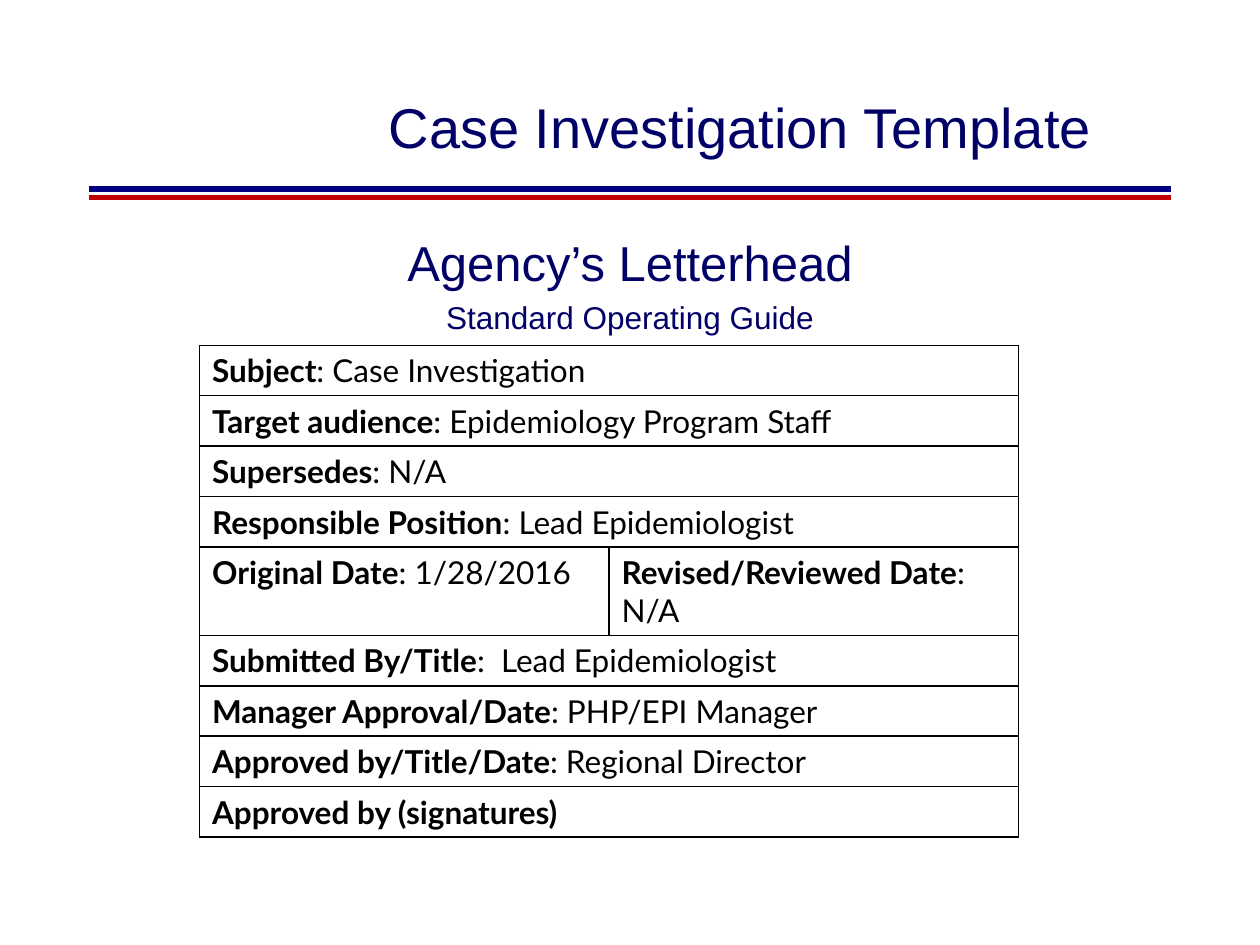
import pptx
import pptx.dml.color
import pptx.enum.shapes
import pptx.enum.text
import pptx.oxml
import pptx.oxml.ns
import pptx.util

Pt = pptx.util.Pt
CENTER = pptx.enum.text.PP_ALIGN.CENTER
MIDDLE = pptx.enum.text.MSO_ANCHOR.MIDDLE
NO_FIT = pptx.enum.text.MSO_AUTO_SIZE.NONE

NAVY, RULE_BLUE, RULE_RED = "000066", "000080", "C00000"
BLACK, WHITE = "000000", "FFFFFF"

# One row per line of the form; each cell is (label, value).
FORM = [
    [("Subject", ": Case Investigation")],
    [("Target audience", ": Epidemiology Program Staff")],
    [("Supersedes", ": N/A")],
    [("Responsible Position", ": Lead Epidemiologist")],
    [("Original Date", ": 1/28/2016"), ("Revised/Reviewed Date", ": N/A")],
    [("Submitted By/Title", ":  Lead Epidemiologist")],
    [("Manager Approval/Date", ": PHP/EPI Manager")],
    [("Approved by/Title/Date", ": Regional Director")],
    [("Approved by (signatures)", "")],
]


def rgb(hex_color):
    return pptx.dml.color.RGBColor.from_string(hex_color)


def style(font, name, size, color, bold=False):
    font.name = name
    font.size = Pt(size)
    font.bold = bold
    font.color.rgb = rgb(color)


def place(shape, box):
    shape.left, shape.top, shape.width, shape.height = map(Pt, box)


def add_title(slide, box):
    title = slide.shapes.title
    place(title, box)
    frame = title.text_frame
    frame.text = "Case Investigation Template"
    frame.auto_size = NO_FIT
    frame.vertical_anchor = MIDDLE
    heading = frame.paragraphs[0]
    heading.alignment = CENTER
    style(heading.runs[0].font, "Arial", 32, NAVY)


def add_double_rule(slide, box):
    left, top, width, gap = box
    for y, color in ((top, RULE_BLUE), (top + gap, RULE_RED)):
        rule = slide.shapes.add_connector(
            pptx.enum.shapes.MSO_CONNECTOR.STRAIGHT,
            Pt(left), Pt(y), Pt(left + width), Pt(y))
        rule.line.color.rgb = rgb(color)
        rule.line.width = Pt(3)
        rule._element.spPr.append(pptx.oxml.parse_xml(
            f'<a:effectLst {pptx.oxml.ns.nsdecls("a")}/>'))


def add_letterhead(slide, box):
    body = slide.placeholders[1]
    place(body, box)
    frame = body.text_frame
    frame.text = "Agency’s Letterhead\nStandard Operating Guide"
    frame.auto_size = NO_FIT
    frame.margin_top = Pt(7)
    for line, size, before in zip(frame.paragraphs, (28, 18), (0, 3.6)):
        properties = line._p.get_or_add_pPr()
        properties.set("marL", "0")
        properties.set("indent", "0")
        properties.append(pptx.oxml.parse_xml(
            f'<a:buNone {pptx.oxml.ns.nsdecls("a")}/>'))
        line.alignment = CENTER
        line.space_before = Pt(before)
        style(line.runs[0].font, "Arial", size, NAVY)


def add_borders(cell, color, width):
    properties = cell._tc.get_or_add_tcPr()
    for position, side in enumerate(("lnL", "lnR", "lnT", "lnB")):
        properties.insert(position, pptx.oxml.parse_xml(
            f'<a:{side} {pptx.oxml.ns.nsdecls("a")} w="{Pt(width)}">'
            f'<a:solidFill><a:srgbClr val="{color}"/></a:solidFill></a:{side}>'))


def fill_cell(cell, label, value):
    entry = cell.text_frame.paragraphs[0]
    for text, bold in ((label, True), (value, False)):
        if text:
            run = entry.add_run()
            run.text = text
            style(run.font, "Lato", 18, BLACK, bold)


def add_form(slide, box):
    left, top, width, height = map(Pt, box)
    form = slide.shapes.add_table(len(FORM), 2, left, top, width, height).table
    form.first_row = form.horz_banding = False
    for row, entries in enumerate(FORM):
        form.rows[row].height = Pt(23 if len(entries) == 1 else 40.3)
        for column in range(2):
            cell = form.cell(row, column)
            cell.fill.solid()
            cell.fill.fore_color.rgb = rgb(WHITE)
            add_borders(cell, BLACK, 1)
        if len(entries) == 1:
            form.cell(row, 0).merge(form.cell(row, 1))
        for column, (label, value) in enumerate(entries):
            fill_cell(form.cell(row, column), label, value)


def main():
    deck = pptx.Presentation()
    deck.slide_width, deck.slide_height = Pt(720), Pt(540)
    slide = deck.slides.add_slide(deck.slide_layouts[1])
    slide.background.fill.solid()
    slide.background.fill.fore_color.rgb = rgb(WHITE)
    add_double_rule(slide, (51, 108, 618, 5))
    add_title(slide, (186, 42, 474, 60))
    add_letterhead(slide, (54, 126, 612, 366))
    add_form(slide, (114, 197.3, 468, 224.3))
    deck.save("out.pptx")


if __name__ == "__main__":
    main()
